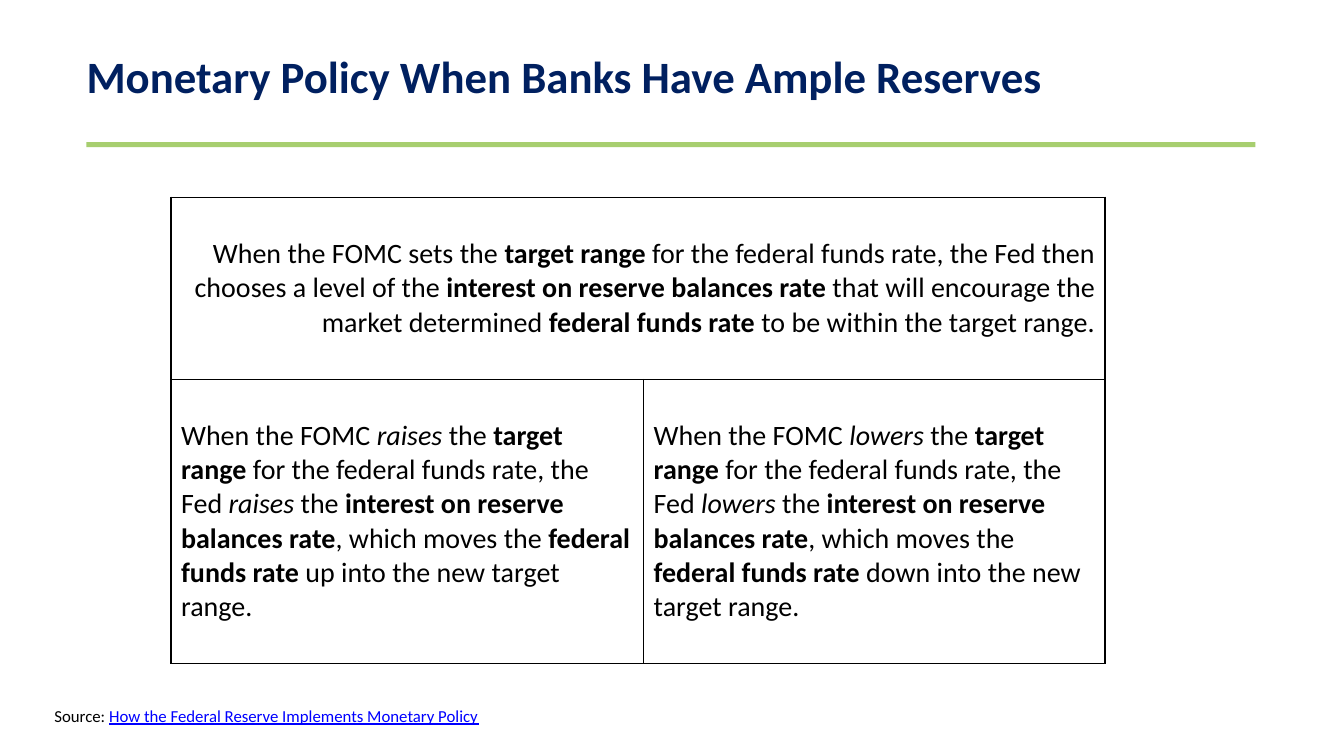
from dataclasses import dataclass

from lxml import etree
from pptx import Presentation
from pptx import util as u
from pptx.dml.color import RGBColor
from pptx.enum import shapes, text
from pptx.oxml.ns import qn


@dataclass(frozen=True)
class Theme:
    font: str = "Calibri"
    navy: str = "002060"
    green: str = "A7CE6F"
    black: str = "000000"
    link: str = "0000FF"
    title_size: int = 32
    body_size: int = 20
    source_size: int = 12
    border_width: int = 1


@dataclass(frozen=True)
class Box:
    """A region of the page, in centimetres."""
    left: float
    top: float
    width: float
    height: float

    def place(self, item):
        item.left, item.top = u.Cm(self.left), u.Cm(self.top)
        item.width, item.height = u.Cm(self.width), u.Cm(self.height)


THEME = Theme()
INSET = 0.13
PLAIN, BOLD, ITALIC = "plain", "bold", "italic"


def add_span(para, wording, size, color, style=PLAIN):
    span = para.add_run()
    span.text = wording
    font = span.font
    font.name, font.size = THEME.font, u.Pt(size)
    font.bold, font.italic = style == BOLD, style == ITALIC
    font.color.rgb = RGBColor.from_string(color)
    return span


def set_up_frame(frame):
    frame.word_wrap = True
    frame.auto_size = text.MSO_AUTO_SIZE.NONE
    frame.vertical_anchor = text.MSO_ANCHOR.TOP
    frame.margin_left = frame.margin_right = u.Cm(INSET)
    frame.margin_top = frame.margin_bottom = u.Cm(INSET)


def build_header(page, box):
    """Place the title at the top of the box and the green rule along its bottom."""
    title = page.shapes.title
    Box(box.left - INSET, box.top, 25.4, 1.7).place(title)
    set_up_frame(title.text_frame)
    para = title.text_frame.paragraphs[0]
    para.alignment = text.PP_ALIGN.LEFT
    para.line_spacing = 0.9
    para.space_before = u.Pt(0)
    add_span(para, "Monetary Policy When Banks Have Ample Reserves",
             THEME.title_size, THEME.navy, BOLD)

    thickness = 0.13
    rule = page.shapes.add_shape(
        shapes.MSO_SHAPE.RECTANGLE, u.Cm(box.left),
        u.Cm(box.top + box.height - thickness), u.Cm(box.width), u.Cm(thickness))
    rule.shadow.inherit = False
    rule.fill.solid()
    rule.fill.fore_color.rgb = RGBColor.from_string(THEME.green)
    rule.line.fill.background()


def draw_borders(cell):
    cell.fill.background()
    properties = cell._tc.get_or_add_tcPr()
    for index, side in enumerate(("lnL", "lnR", "lnT", "lnB")):
        line = etree.Element(qn(f"a:{side}"), w=str(u.Pt(THEME.border_width)))
        fill = etree.SubElement(line, qn("a:solidFill"))
        etree.SubElement(fill, qn("a:srgbClr"), val=THEME.black)
        properties.insert(index, line)


def write_cell(cell, spans, alignment):
    cell.vertical_anchor = text.MSO_ANCHOR.MIDDLE
    para = cell.text_frame.paragraphs[0]
    para.alignment = alignment
    for wording, style in spans:
        add_span(para, wording, THEME.body_size, THEME.black, style)


def rate_change(action, direction):
    """Return the spans that tell what follows when the FOMC moves its target."""
    return [
        ("When the FOMC ", PLAIN), (action, ITALIC), (" the ", PLAIN),
        ("target range", BOLD), (" for the federal funds rate, the Fed ", PLAIN),
        (action, ITALIC), (" the ", PLAIN),
        ("interest on reserve balances rate", BOLD), (", which moves the ", PLAIN),
        ("federal funds rate", BOLD),
        (f" {direction} into the new target range.", PLAIN),
    ]


def build_policy_table(page, box):
    frame = page.shapes.add_table(2, 2, u.Cm(box.left), u.Cm(box.top),
                                  u.Cm(box.width), u.Cm(box.height))
    table = frame.table
    table.first_row = table.horz_banding = False
    left_width, top_height = 11.91, 4.59
    for column, width in zip(table.columns, (left_width, box.width - left_width)):
        column.width = u.Cm(width)
    for row, height in zip(table.rows, (top_height, box.height - top_height)):
        row.height = u.Cm(height)
    for cell in table.iter_cells():
        draw_borders(cell)

    table.cell(0, 0).merge(table.cell(0, 1))
    overview = [
        ("When the FOMC sets the ", PLAIN), ("target range ", BOLD),
        ("for the federal funds rate, the Fed then chooses a level of the ", PLAIN),
        ("interest on reserve balances rate ", BOLD),
        ("that will encourage the market determined ", PLAIN),
        ("federal funds rate", BOLD), (" to be within the target range.", PLAIN),
    ]
    write_cell(table.cell(0, 0), overview, text.PP_ALIGN.RIGHT)
    changes = (("raises", "up"), ("lowers", "down"))
    for column, change in enumerate(changes):
        write_cell(table.cell(1, column), rate_change(*change), text.PP_ALIGN.LEFT)


def build_source(page, box):
    note = page.shapes.add_textbox(0, 0, 0, 0)
    box.place(note)
    set_up_frame(note.text_frame)
    para = note.text_frame.paragraphs[0]
    add_span(para, "Source: ", THEME.source_size, THEME.black)
    reference = add_span(para, "How the Federal Reserve Implements Monetary Policy",
                         THEME.source_size, THEME.link)
    reference.font.underline = True


def main():
    deck = Presentation()
    deck.slide_width, deck.slide_height = u.Cm(33.87), u.Cm(19.05)
    page = deck.slides.add_slide(deck.slide_layouts.get_by_name("Title Only"))
    build_header(page, Box(2.18, 1.24, 29.46, 2.47))
    build_policy_table(page, Box(4.31, 4.97, 23.54, 11.75))
    build_source(page, Box(1.24, 17.65, 17.4, 0.77))
    deck.save("out.pptx")


if __name__ == "__main__":
    main()
